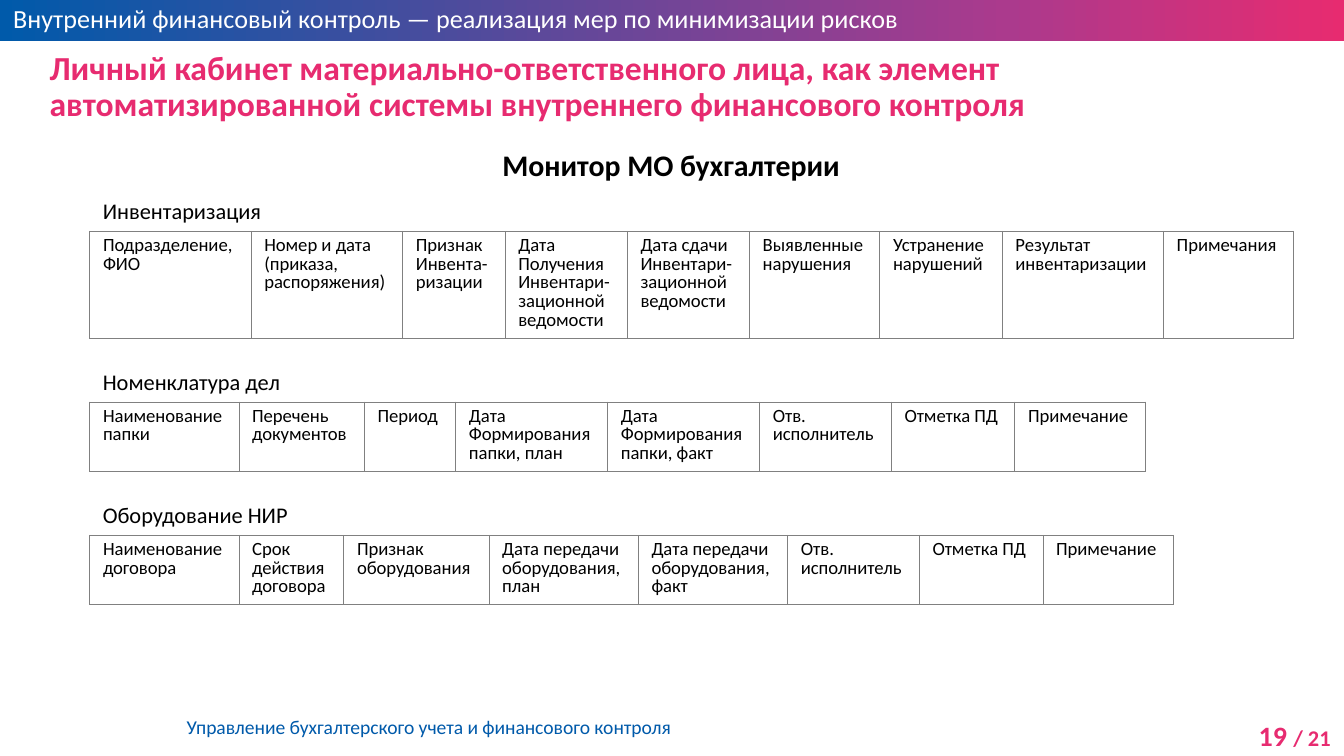
from copy import deepcopy
from dataclasses import dataclass

from pptx import Presentation
from pptx.dml.color import RGBColor
from pptx.enum.shapes import MSO_SHAPE
from pptx.enum.text import MSO_ANCHOR, PP_ALIGN
from pptx.oxml import parse_xml
from pptx.oxml.ns import qn
from pptx.util import Pt

FONT = "Calibri"
BLUE, PURPLE, PINK = "005AAA", "AB3A8D", "E72B70"
BLACK, WHITE, GREY = "000000", "FFFFFF", "808080"
LEFT = 48
CAPTION_HEIGHT = 21.8
DRAWING_NS = "http://schemas.openxmlformats.org/drawingml/2006/main"


@dataclass
class Column:
    width: float
    heading: str  # "\n" starts a paragraph, "\v" breaks a line


@dataclass
class Register:
    caption: str
    top: float
    height: float
    columns: list[Column]


REGISTERS = [
    Register("Инвентаризация", 123.8, 57.2, [
        Column(86.4, "Подразделение,\nФИО"),
        Column(81.2, "Номер и дата\n(приказа,\nраспоряжения)"),
        Column(54.9, "Признак\nИнвента-\vризации"),
        Column(65.5, "Дата\nПолучения\nИнвентари-\vзационной\nведомости"),
        Column(65.5, "Дата сдачи\nИнвентари-\vзационной\nведомости"),
        Column(69.8, "Выявленные\nнарушения"),
        Column(65.6, "Устранение\nнарушений"),
        Column(86.4, "Результат\nинвентаризации"),
        Column(69.8, "Примечания"),
    ]),
    Register("Номенклатура дел", 215.3, 37.2, [
        Column(79.9, "Наименование\nпапки"),
        Column(67.2, "Перечень\nдокументов"),
        Column(49, "Период"),
        Column(81.4, "Дата\nФормирования\nпапки, план"),
        Column(81.4, "Дата\nФормирования\nпапки, факт"),
        Column(70.6, "Отв.\nисполнитель"),
        Column(66.2, "Отметка ПД"),
        Column(70, "Примечание"),
    ]),
    Register("Оборудование НИР", 286.6, 37.2, [
        Column(79.9, "Наименование\vдоговора"),
        Column(56.2, "Срок\vдействия\vдоговора"),
        Column(77.8, "Признак\vоборудования"),
        Column(80, "Дата передачи\vоборудования,\vплан"),
        Column(80, "Дата передачи\vоборудования,\vфакт"),
        Column(70.6, "Отв.\vисполнитель"),
        Column(66.2, "Отметка ПД"),
        Column(70, "Примечание"),
    ]),
]


def color(value: str) -> RGBColor:
    return RGBColor.from_string(value)


def style_font(font, size: float, fill: str, bold: bool = False) -> None:
    font.name, font.size, font.bold = FONT, Pt(size), bold
    font.color.rgb = color(fill)


def write(frame, text: str, *, size: float, fill: str = BLACK, bold: bool = False,
          align=PP_ALIGN.LEFT, spacing=None) -> None:
    frame.text = text
    for para in frame.paragraphs:
        para.alignment = align
        para.line_spacing = spacing
        for span in para.runs:
            style_font(span.font, size, fill, bold)


def add_text(page, left: float, top: float, width: float, height: float,
             text: str, *, wrap: bool = True, **text_format):
    box = page.shapes.add_textbox(Pt(left), Pt(top), Pt(width), Pt(height))
    box.text_frame.word_wrap = wrap
    write(box.text_frame, text, **text_format)
    return box


def add_header_bar(page) -> None:
    bar = page.shapes.add_shape(MSO_SHAPE.RECTANGLE, 0, 0, Pt(720), Pt(21.9))
    bar.shadow.inherit = False
    bar.line.fill.background()
    bar.fill.gradient()
    bar.fill.gradient_angle = 0
    stops = next(bar._element.spPr.iter(qn("a:gsLst")))
    stops.append(deepcopy(stops[-1]))
    for stop, (position, shade) in zip(
            bar.fill.gradient_stops, [(0, BLUE), (0.75, PURPLE), (1, PINK)]):
        stop.position = position
        stop.color.rgb = color(shade)


def add_borders(cell) -> None:
    properties = cell._tc.get_or_add_tcPr()
    for index, side in enumerate("LRTB"):
        properties.insert(index, parse_xml(
            f'<a:ln{side} xmlns:a="{DRAWING_NS}" w="{Pt(0.25)}"><a:solidFill>'
            f'<a:srgbClr val="{GREY}"/></a:solidFill></a:ln{side}>'))


def add_register(page, register: Register) -> None:
    add_text(page, LEFT, register.top - CAPTION_HEIGHT, 312, CAPTION_HEIGHT,
             register.caption, size=12)
    columns = register.columns
    width = sum(column.width for column in columns)
    table = page.shapes.add_table(1, len(columns), Pt(LEFT), Pt(register.top),
                                  Pt(width), Pt(register.height)).table
    table.first_row = table.horz_banding = False
    for index, column in enumerate(columns):
        table.columns[index].width = Pt(column.width)
        cell = table.cell(0, index)
        cell.fill.background()
        add_borders(cell)
        write(cell.text_frame, column.heading, size=10, spacing=Pt(10))


def main() -> None:
    deck = Presentation()
    deck.slide_width, deck.slide_height = Pt(720), Pt(405)
    page = deck.slides.add_slide(deck.slide_layouts[5])

    # Header bar, footer and page number
    add_header_bar(page)
    add_text(page, 0, -2.2, 720, 24.5,
             "Внутренний финансовый контроль — реализация мер по минимизации рисков",
             size=14, fill=WHITE)
    add_text(page, 92.9, 379.4, 276.5, 20.2,
             "Управление бухгалтерского учета и финансового контроля",
             wrap=False, size=10.5, fill=BLUE)
    number = add_text(page, 655.2, 381.6, 64.8, 25.2, "19 ", size=15, fill=PINK,
                      bold=True, align=PP_ALIGN.RIGHT)
    total = number.text_frame.paragraphs[0].add_run()
    total.text = "/ 21"
    style_font(total.font, 12, PINK, bold=True)

    # Title and subtitle
    title = page.shapes.title
    title.left, title.top, title.width, title.height = (
        Pt(19.4), Pt(23.8), Pt(680.4), Pt(51.1))
    title.text_frame.vertical_anchor = MSO_ANCHOR.TOP
    title.text_frame.word_wrap = True
    write(title.text_frame,
          "Личный кабинет материально-ответственного лица, как элемент "
          "автоматизированной системы внутреннего финансового контроля",
          size=18, fill=PINK, bold=True, spacing=0.9)
    add_text(page, 19.4, 74.9, 680.4, 26.6, "Монитор МО бухгалтерии",
             size=16, bold=True, align=PP_ALIGN.CENTER)

    # Registers with their captions
    for register in REGISTERS:
        add_register(page, register)

    deck.save("out.pptx")


if __name__ == "__main__":
    main()
